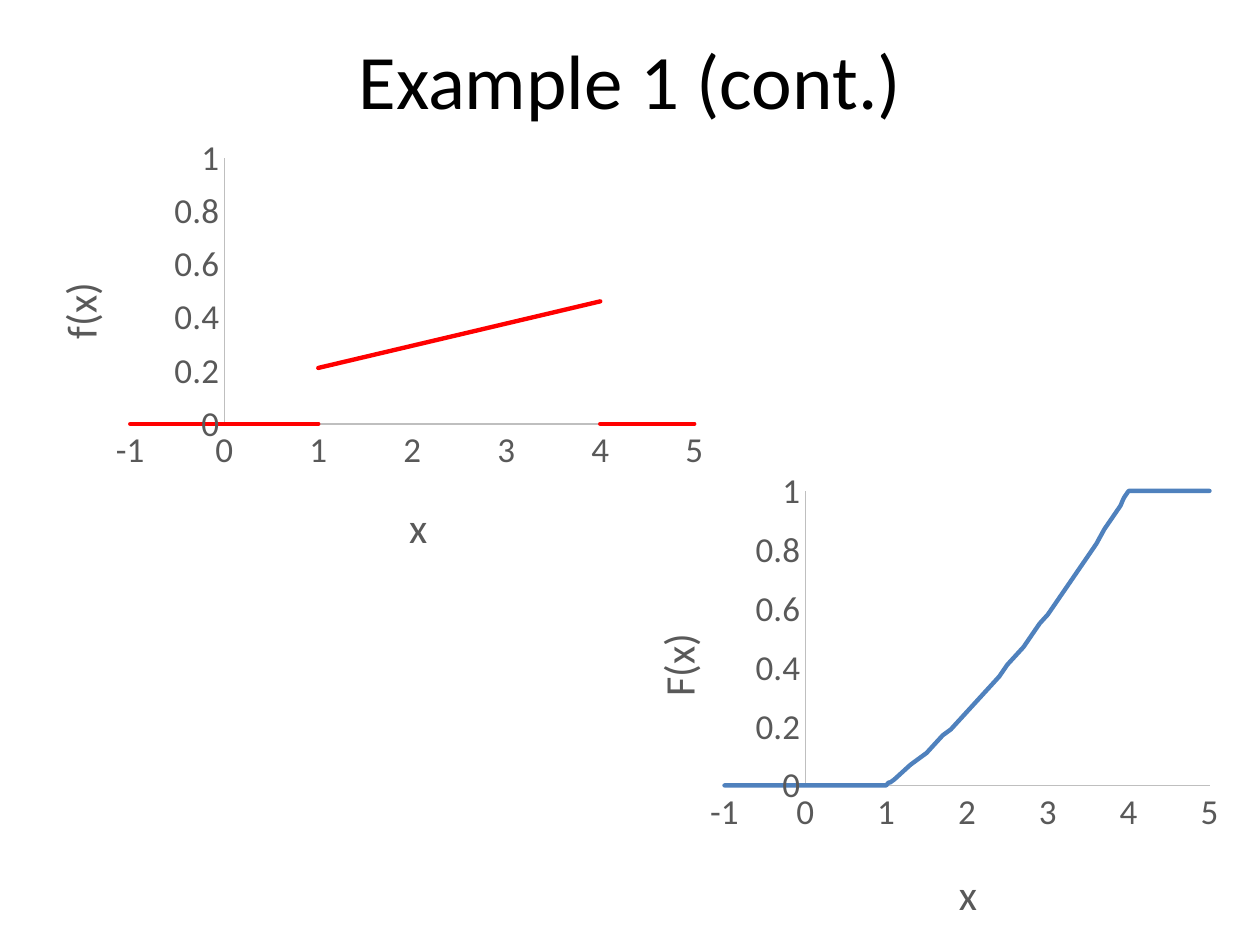
from dataclasses import dataclass
from typing import Callable

from lxml.etree import SubElement
from pptx import Presentation
from pptx.chart.data import XyChartData
from pptx.dml.color import RGBColor
from pptx.enum.chart import XL_CHART_TYPE, XL_TICK_MARK
from pptx.enum.text import MSO_ANCHOR, PP_ALIGN
from pptx.oxml import parse_xml
from pptx.oxml.ns import nsdecls, qn
from pptx.util import Pt


@dataclass(frozen=True)
class Theme:
    font: str = "Calibri"
    title_size: int = 44
    axis_title_size: int = 24
    label_size: int = 20
    black: RGBColor = RGBColor(0x00, 0x00, 0x00)
    gray: RGBColor = RGBColor(0x59, 0x59, 0x59)
    axis_line: RGBColor = RGBColor(0xBF, 0xBF, 0xBF)
    red: RGBColor = RGBColor(0xFF, 0x00, 0x00)
    blue: RGBColor = RGBColor(0x4F, 0x81, 0xBD)


THEME = Theme()
Point = tuple[float, float]


@dataclass(frozen=True)
class Plot:
    """A chart; area, x_title_at and y_title_at are fractions of its frame."""
    frame: tuple[float, float, float, float]
    color: RGBColor
    y_title: str
    series: list[list[Point]]
    area: tuple[float, float, float, float]
    x_title_at: Point
    y_title_at: Point


def density(x: float) -> float:
    return round((x + 1.5) / 12, 2)


def distribution(x: float) -> float:
    inside = min(max(x, 1), 4)
    return round((inside ** 2 + 3 * inside - 4) / 24, 2)


def sample(function: Callable[[float], float], xs: list[float]) -> list[Point]:
    return [(x, function(x)) for x in xs]


DISTRIBUTION_XS = [-3, 1, 1.03, 1.05, 1.1,
                   *(tenths / 10 for tenths in range(13, 40)),
                   3.93, 3.95, 4, 10]

PLOTS = [
    Plot((1, 72, 408, 258), THEME.red, "f(x)",
         [[(-3, 0), (1, 0)], sample(density, [1, 4]), [(4, 0), (10, 0)]],
         (0.18, 0.07, 0.79, 0.59), (0.56, 0.81), (0.06, 0.33)),
    Plot((342, 264, 360, 276), THEME.blue, "F(x)",
         [sample(distribution, DISTRIBUTION_XS)],
         (0.2, 0.06, 0.77, 0.61), (0.56, 0.82), (0.07, 0.34)),
]


def set_font(font, size: int, color: RGBColor) -> None:
    font.name = THEME.font
    font.size = Pt(size)
    font.bold = False
    font.color.rgb = color


def manual_layout(**values: float | str):
    layout = parse_xml(f"<c:layout {nsdecls('c')}><c:manualLayout/></c:layout>")
    for name, value in values.items():
        SubElement(layout[0], qn(f"c:{name}")).set("val", str(value))
    return layout


def replace_layout(parent, layout, index: int) -> None:
    for old in parent.findall(qn("c:layout")):
        parent.remove(old)
    parent.insert(index, layout)


def style_axis(axis, title: str, title_at: Point, low: float, high: float,
               step: float, rotation: int) -> None:
    axis.minimum_scale, axis.maximum_scale = low, high
    axis.major_unit = step
    axis.has_major_gridlines = False
    axis.major_tick_mark = axis.minor_tick_mark = XL_TICK_MARK.NONE
    axis.format.line.color.rgb = THEME.axis_line
    axis.format.line.width = Pt(0.75)
    set_font(axis.tick_labels.font, THEME.label_size, THEME.gray)
    axis.tick_labels.number_format = "General"
    axis.tick_labels.number_format_is_linked = False

    frame = axis.axis_title.text_frame
    frame.text = title
    set_font(frame.paragraphs[0].font, THEME.axis_title_size, THEME.gray)
    element = axis.axis_title._element
    element.find(".//" + qn("a:bodyPr")).set("rot", str(rotation))
    left, top = title_at
    replace_layout(element, manual_layout(xMode="edge", yMode="edge",
                                          x=left, y=top), 1)


def add_plot(page, plot: Plot) -> None:
    data = XyChartData()
    for number, points in enumerate(plot.series, 1):
        series = data.add_series(f"Series {number}")
        for x, y in points:
            series.add_data_point(x, y)
    chart = page.shapes.add_chart(XL_CHART_TYPE.XY_SCATTER_SMOOTH_NO_MARKERS,
                                  *map(Pt, plot.frame), data).chart
    chart.has_title = False
    chart.has_legend = False
    set_font(chart.font, 10, THEME.black)
    chart.plots[0].vary_by_categories = False
    for series in chart.plots[0].series:
        series.smooth = True
        series.format.line.color.rgb = plot.color
        series.format.line.width = Pt(2.5)
        series.format.line._ln.set("cap", "rnd")

    style_axis(chart.category_axis, "x", plot.x_title_at, -1, 5, 1, 0)
    style_axis(chart.value_axis, plot.y_title, plot.y_title_at, 0, 1, 0.2, -5400000)
    left, top, width, height = plot.area
    plot_area = chart._chartSpace.find(".//" + qn("c:plotArea"))
    replace_layout(plot_area, manual_layout(
        layoutTarget="inner", xMode="edge", yMode="edge",
        x=left, y=top, w=width, h=height), 0)


def add_title(page, text: str) -> None:
    box = page.shapes.add_textbox(Pt(36), Pt(0), Pt(648), Pt(90))
    box.text_frame.word_wrap = True
    box.text_frame.vertical_anchor = MSO_ANCHOR.MIDDLE
    para = box.text_frame.paragraphs[0]
    para.text = text
    para.alignment = PP_ALIGN.CENTER
    set_font(para.font, THEME.title_size, THEME.black)


def main() -> None:
    deck = Presentation()
    deck.slide_width, deck.slide_height = Pt(720), Pt(540)
    page = deck.slides.add_slide(deck.slide_layouts[6])
    add_title(page, "Example 1 (cont.)")
    for plot in PLOTS:
        add_plot(page, plot)
    deck.save("out.pptx")


if __name__ == "__main__":
    main()
